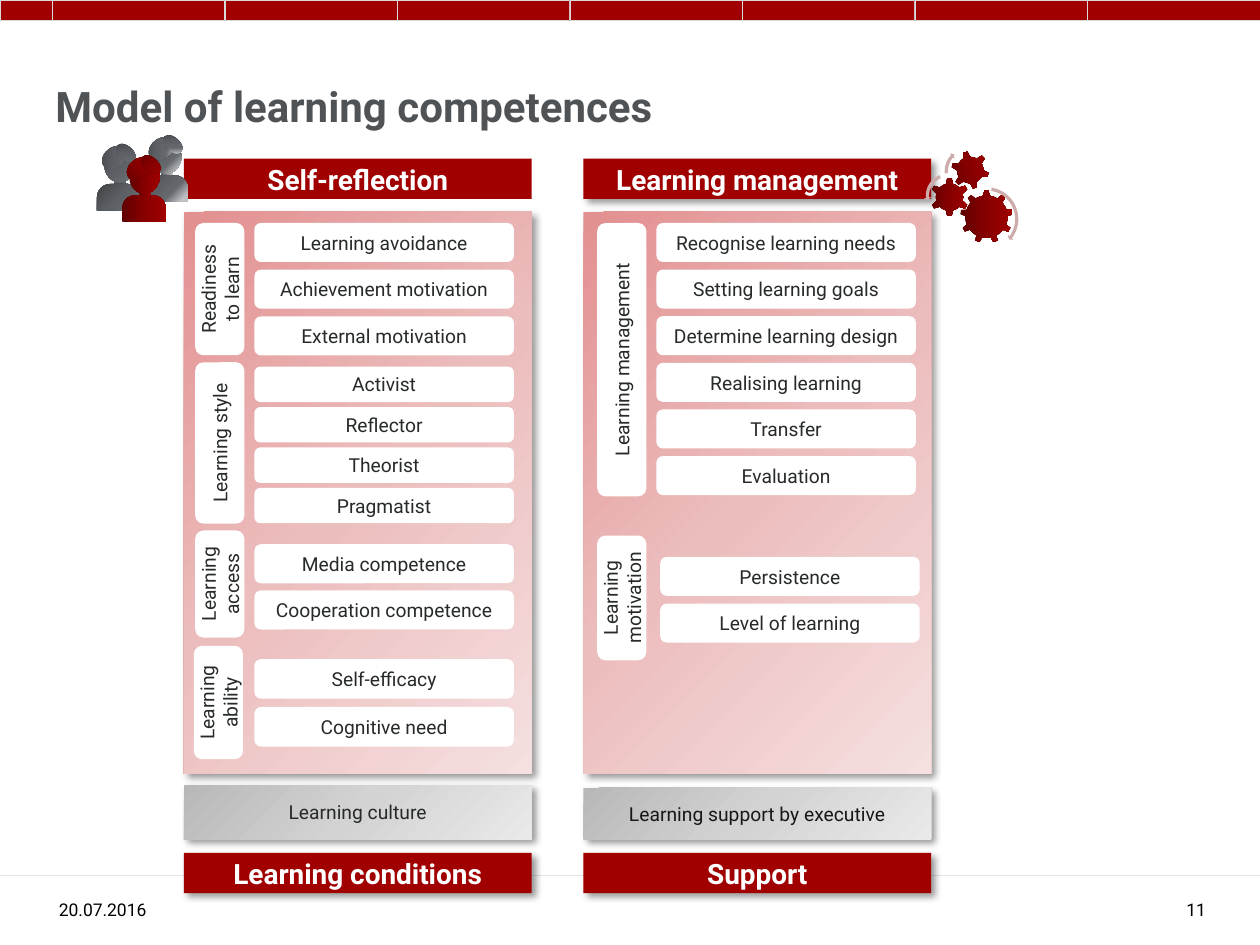
from lxml import etree
from pptx import Presentation
from pptx.dml.color import RGBColor
from pptx.enum.shapes import MSO_CONNECTOR, MSO_SHAPE
from pptx.enum.text import MSO_ANCHOR, PP_ALIGN
from pptx.oxml.ns import qn
from pptx.util import Pt

RECT, ROUNDED, OVAL = MSO_SHAPE.RECTANGLE, MSO_SHAPE.ROUNDED_RECTANGLE, MSO_SHAPE.OVAL
DOME = MSO_SHAPE.ROUND_2_SAME_RECTANGLE
GEAR_6, GEAR_9 = MSO_SHAPE.GEAR_6, MSO_SHAPE.GEAR_9
ARC, LEFT_ARC = MSO_SHAPE.CIRCULAR_ARROW, MSO_SHAPE.LEFT_CIRCULAR_ARROW
STRAIGHT = MSO_CONNECTOR.STRAIGHT
LEFT, CENTER, RIGHT = PP_ALIGN.LEFT, PP_ALIGN.CENTER, PP_ALIGN.RIGHT
TOP, MIDDLE, BOTTOM = MSO_ANCHOR.TOP, MSO_ANCHOR.MIDDLE, MSO_ANCHOR.BOTTOM

FONT = "Roboto"
RED, WHITE, INK = "A00000", "FFFFFF", "272A2A"
PINK_FADE = (45, [(0, "E39090"), (50, "ECBDBD"), (100, "F5DFDF")])
GREY_FADE = (45, [(0, "B8B8B8"), (50, "D3D3D3"), (100, "E9E9E9")])
DARK_FADE = (45, [(0, "414446"), (50, "5C6064"), (100, "6D7277")])
SHINY_FADE = (45, [(0, "414446"), (37, "5C6064"), (64, "65696E"),
                   (89, "BFC0C3"), (100, "BFBFBF")])
RED_FADE = (0, [(0, "5F0000"), (50, "870000"), (100, RED)])

COLUMN_W, HEAD_H, ITEM_W, TAG_W = 198.7, 23, 148.3, 28.1

# Column: x, heading, heading shadow, base top, base height, base text, base colour, footer
COLUMNS = [
    (105.1, "Self-reflection", False, 448.6, 31, "Learning culture", INK,
     "Learning conditions"),
    (333.4, "Learning management", True, 450, 29.5, "Learning support by executive",
     "161718", "Support"),
]
# Group: tag text, tag centre x, tag top, tag length, item x, item top, item height, pitch, items
GROUPS = [
    ("Readiness to learn", 125.6, 127.4, 75.6, 145.4, 127.4, 22.3, 26.7,
     ["Learning avoidance", "Achievement motivation", "External motivation"]),
    ("Learning style", 125.6, 207, 92.2, 145.4, 209.5, 20.2, 23.1,
     ["Activist", "Reflector", "Theorist", "Pragmatist"]),
    ("Learning access", 125.6, 303.1, 61.2, 145.4, 311, 22.3, 26.4,
     ["Media competence", "Cooperation competence"]),
    ("Learning ability", 124.8, 369, 64.8, 145.4, 376.6, 22.6, 27.4,
     ["Self-efficacy", "Cognitive need"]),
    ("Learning management", 355.3, 127.4, 156.2, 375.1, 127.4, 22.3, 26.64,
     ["Recognise learning needs", "Setting learning goals", "Determine learning design",
      "Realising learning", "Transfer", "Evaluation"]),
    ("Learning motivation", 355.3, 306, 71.3, 377.3, 318.2, 22.3, 26.7,
     ["Persistence", "Level of learning"]),
]
PEOPLE = [(55.4, 83.5, DARK_FADE), (82.1, 78.5, SHINY_FADE), (69.6, 90, RED_FADE)]
PERSON_PARTS = [
    (RECT, 10.1, 13.7, 6.5, 8.6, 0),
    (OVAL, 4.3, 1.4, 17.3, 19.4, 0),
    (DOME, 0, 21.6, 25.2, 15.1, 0),
    (OVAL, 2.2, 0.7, 15.8, 11.5, 323.1),
    (OVAL, 10.1, 0, 13, 7.9, 41.8),
]
GEARS = [(GEAR_9, 548.6, 108.7, 30.2, 0), (GEAR_6, 531.4, 101.5, 22.3, 0),
         (GEAR_6, 543.6, 86.4, 21.6, 345)]
GEAR_ARROWS = [
    (ARC, 544.3, 105.8, 38.9, (0.047, 2.99, 22.307, 167.626, 0.055)),
    (LEFT_ARC, 527.8, 97.9, 28.1, (0.065, 4.3, 104.891, 148.378, 0.075)),
    (ARC, 538.6, 82.8, 30.2, (0.06, 3.941, 133.138, 105.082, 0.07)),
]


def rgb(value):
    return RGBColor.from_string(value)


def add_color(parent, value):
    return etree.SubElement(parent, qn("a:srgbClr"), val=value)


def add_gradient(sp, angle, stops):
    grad = etree.Element(qn("a:gradFill"), rotWithShape="1")
    stop_list = etree.SubElement(grad, qn("a:gsLst"))
    for position, color in stops:
        add_color(etree.SubElement(stop_list, qn("a:gs"), pos=str(position * 1000)), color)
    etree.SubElement(grad, qn("a:lin"), ang=str(angle * 60000), scaled="0")
    sp._element.spPr.find(qn("a:prstGeom")).addnext(grad)


def add_shadow(sp):
    effects = sp._element.spPr.find(qn("a:effectLst"))
    outer = etree.SubElement(effects, qn("a:outerShdw"), blurRad=str(Pt(4)),
                             dist=str(Pt(3)), dir="2700000", algn="tl", rotWithShape="0")
    etree.SubElement(add_color(outer, "000000"), qn("a:alpha"), val="40000")


def add_box(shapes, kind, x, y, w, h, fill, rotation=0, shadow=False, line=None):
    sp = shapes.add_shape(kind, Pt(x), Pt(y), Pt(w), Pt(h))
    sp.rotation = rotation
    if isinstance(fill, tuple):
        add_gradient(sp, *fill)
    else:
        sp.fill.solid()
        sp.fill.fore_color.rgb = rgb(fill)
    if line:
        sp.line.color.rgb = rgb(line)
        sp.line.width = Pt(0.5)
    else:
        sp.line.fill.background()
    sp.shadow.inherit = False
    if shadow:
        add_shadow(sp)
    return sp


def set_text(sp, text, size, color, bold=False, align=CENTER, anchor=MIDDLE):
    tf = sp.text_frame
    tf.word_wrap = True
    tf.vertical_anchor = anchor
    p = tf.paragraphs[0]
    p.text = text
    p.alignment = align
    p.font.name = FONT
    p.font.size = Pt(size)
    p.font.bold = bold
    p.font.color.rgb = rgb(color)


def add_title(slide, text):
    title = slide.shapes.title
    title.left, title.top, title.width, title.height = Pt(24.5), Pt(42.5), Pt(499), Pt(68.4)
    set_text(title, text, 24, "4F5355", True, LEFT, TOP)


def add_frame(shapes):
    first_w, cell_w = 30, 690 / 7
    add_box(shapes, RECT, 0, 0, first_w, 12, RED, line="D9D9D9")
    for i in range(7):
        add_box(shapes, RECT, first_w + i * cell_w, 0, cell_w, 12, RED, line="D9D9D9")
    rule = shapes.add_connector(STRAIGHT, Pt(0), Pt(500.4), Pt(720), Pt(500.4))
    rule.line.color.rgb = rgb("E3E4E5")
    rule.line.width = Pt(0.5)
    etree.SubElement(rule._element.spPr, qn("a:effectLst"))
    for x, w, text, align in [(26.6, 79.2, "20.07.2016", LEFT), (637.2, 59, "11", RIGHT)]:
        box = shapes.add_textbox(Pt(x), Pt(500.4), Pt(w), Pt(28.8))
        set_text(box, text, 10, "000000", align=align, anchor=BOTTOM)


def add_column(shapes, x, heading, head_shadow, base_y, base_h, base, base_color, footer):
    add_box(shapes, RECT, x, 121, COLUMN_W, 321.1, PINK_FADE, shadow=True)
    sp = add_box(shapes, RECT, x, base_y, COLUMN_W, base_h, GREY_FADE, shadow=True)
    set_text(sp, base, 11, base_color)
    for y, text, shadow in [(90.7, heading, head_shadow), (487.4, footer, True)]:
        sp = add_box(shapes, RECT, x, y, COLUMN_W, HEAD_H, RED, shadow=shadow)
        set_text(sp, text, 16, WHITE, True)


def add_group(shapes, tag, tag_x, tag_y, tag_len, x, y, h, pitch, items):
    sp = add_box(shapes, ROUNDED, tag_x - tag_len / 2, tag_y + (tag_len - TAG_W) / 2,
                 tag_len, TAG_W, WHITE, 270)
    set_text(sp, tag, 11, INK)
    for i, item in enumerate(items):
        sp = add_box(shapes, ROUNDED, x, y + i * pitch, ITEM_W, h, WHITE)
        set_text(sp, item, 11, INK)


def add_people(shapes):
    group = shapes.add_group_shape().shapes
    for x, y, fade in PEOPLE:
        for kind, dx, dy, w, h, rotation in PERSON_PARTS:
            sp = add_box(group, kind, x + dx, y + dy, w, h, fade, rotation)
            if kind == DOME:
                sp.adjustments[0] = 0.5


def add_gears(shapes):
    group = shapes.add_group_shape().shapes
    for kind, x, y, size, rotation in GEARS:
        add_box(group, kind, x, y, size, size, RED_FADE, rotation)
    for kind, x, y, size, adjustments in GEAR_ARROWS:
        sp = add_box(group, kind, x, y, size, size, "CDABAB")
        for i, value in enumerate(adjustments):
            sp.adjustments[i] = value


def main():
    prs = Presentation()
    prs.slide_width, prs.slide_height = Pt(720), Pt(540)
    slide = prs.slides.add_slide(prs.slide_layouts[5])
    shapes = slide.shapes
    add_title(slide, "Model of learning competences")
    add_frame(shapes)
    for column in COLUMNS:
        add_column(shapes, *column)
    for group in GROUPS:
        add_group(shapes, *group)
    add_people(shapes)
    add_gears(shapes)
    prs.save("out.pptx")


if __name__ == "__main__":
    main()
